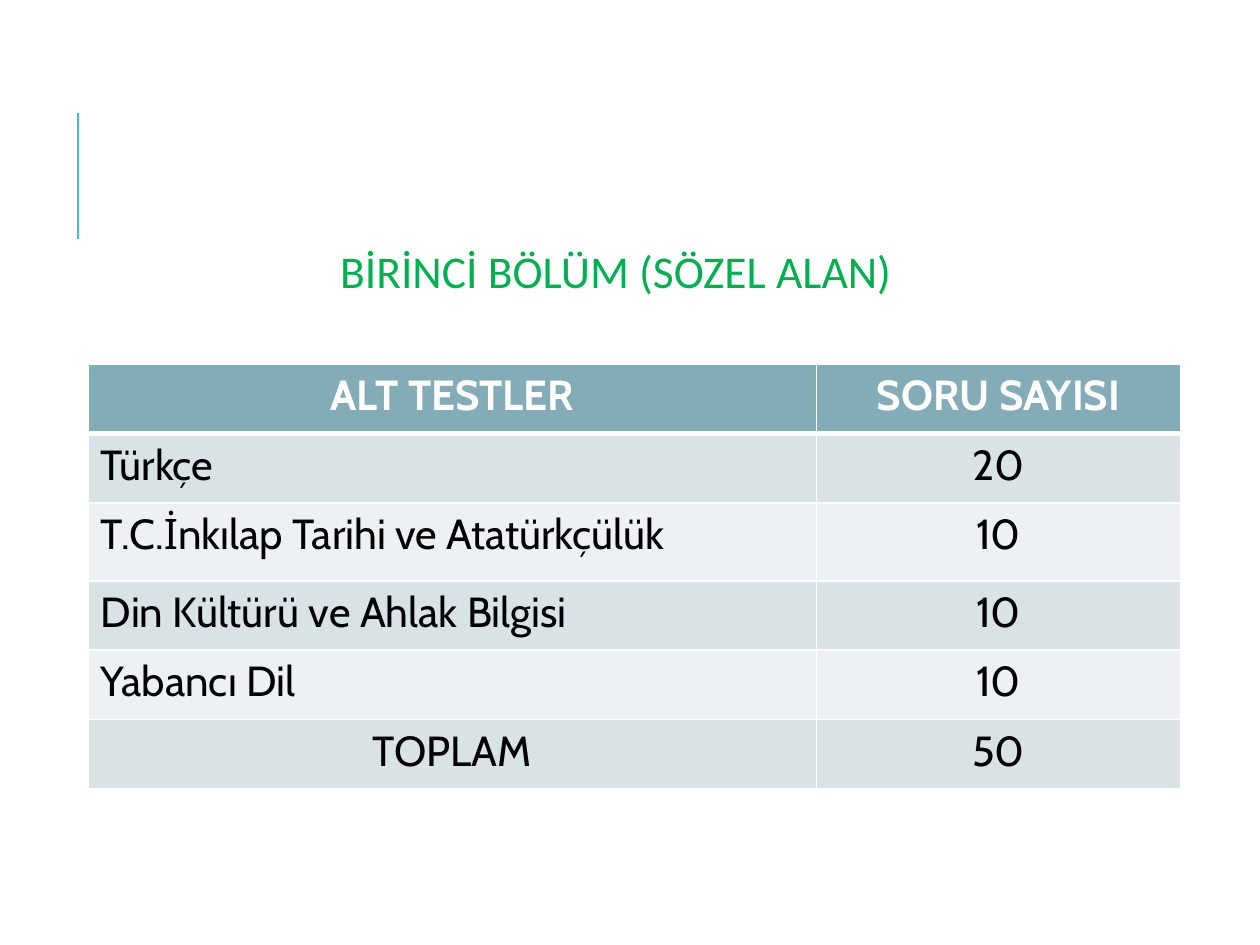
from dataclasses import dataclass

from lxml import etree
from pptx import Presentation
from pptx.dml.color import RGBColor
from pptx.enum.shapes import MSO_CONNECTOR
from pptx.enum.text import PP_ALIGN
from pptx.oxml.ns import qn
from pptx.util import Inches, Pt

STRAIGHT = MSO_CONNECTOR.STRAIGHT
LEFT, CENTER = PP_ALIGN.LEFT, PP_ALIGN.CENTER

HEADER_FILL = "84ACB6"
BAND_FILLS = ("D9E3E5", "EDF1F3")
WHITE, BLACK = "FFFFFF", "000000"
COLUMN_WIDTHS = (5.78, 2.89)


@dataclass
class TableRow:
    label: str
    count: str
    label_align: PP_ALIGN = LEFT
    height: float = 0.55


ROWS = [
    TableRow("ALT TESTLER", "SORU SAYISI", CENTER),
    TableRow("Türkçe", "20"),
    TableRow("T.C.İnkılap Tarihi ve Atatürkçülük", "10", height=0.62),
    TableRow("Din Kültürü ve Ahlak Bilgisi", "10"),
    TableRow("Yabancı Dil", "10"),
    TableRow("TOPLAM", "50", CENTER),
]


def rgb(color: str) -> RGBColor:
    return RGBColor.from_string(color)


def write(tf, text: str, align, font: str, size: int, color: str, bold: bool = False) -> None:
    tf.text = text
    p = tf.paragraphs[0]
    p.alignment = align
    r = p.runs[0]
    r.font.name = font
    r.font.size = Pt(size)
    r.font.bold = bold
    r.font.color.rgb = rgb(color)


def add_borders(cell, widths: dict[str, int], color: str) -> None:
    tc_pr = cell._tc.get_or_add_tcPr()
    for side, width in widths.items():
        ln = etree.SubElement(tc_pr, qn(f"a:ln{side}"), w=str(Pt(width)))
        fill = etree.SubElement(ln, qn("a:solidFill"))
        etree.SubElement(fill, qn("a:srgbClr"), val=color)


def add_accent_line(s) -> None:
    line = s.shapes.add_connector(STRAIGHT, Inches(0.62), Inches(1.9), Inches(0.62), Inches(0.9))
    line.line.color.rgb = rgb("58B6C0")
    line.line.width = Pt(1.5)
    etree.SubElement(line._element.spPr, qn("a:effectLst"))


def add_title(s) -> None:
    sp = s.shapes.add_textbox(Inches(1.18), Inches(1.88), Inches(7.42), Inches(0.54))
    tf = sp.text_frame
    tf.word_wrap = True
    write(tf, "BİRİNCİ BÖLÜM (SÖZEL ALAN)", CENTER, "Calibri", 26, "00B050")


def add_test_table(s, rows: list[TableRow]) -> None:
    height = sum(row.height for row in rows)
    table = s.shapes.add_table(
        len(rows), len(COLUMN_WIDTHS), Inches(0.7), Inches(2.89),
        Inches(sum(COLUMN_WIDTHS)), Inches(height),
    ).table
    for column, width in zip(table.columns, COLUMN_WIDTHS):
        column.width = Inches(width)
    for i, row in enumerate(rows):
        table.rows[i].height = Inches(row.height)
        header = i == 0
        fill = HEADER_FILL if header else BAND_FILLS[(i - 1) % 2]
        borders = {"L": 1, "R": 1, "T": 3 if i == 1 else 1, "B": 3 if header else 1}
        for j, (text, align) in enumerate([(row.label, row.label_align), (row.count, CENTER)]):
            cell = table.cell(i, j)
            add_borders(cell, borders, WHITE)
            cell.fill.solid()
            cell.fill.fore_color.rgb = rgb(fill)
            write(cell.text_frame, text, align, "Cabin", 24, WHITE if header else BLACK, header)


def main() -> None:
    prs = Presentation()
    prs.slide_width, prs.slide_height = Inches(10), Inches(7.5)
    s = prs.slides.add_slide(prs.slide_layouts[6])
    add_accent_line(s)
    add_test_table(s, ROWS)
    add_title(s)
    prs.save("out.pptx")


if __name__ == "__main__":
    main()
